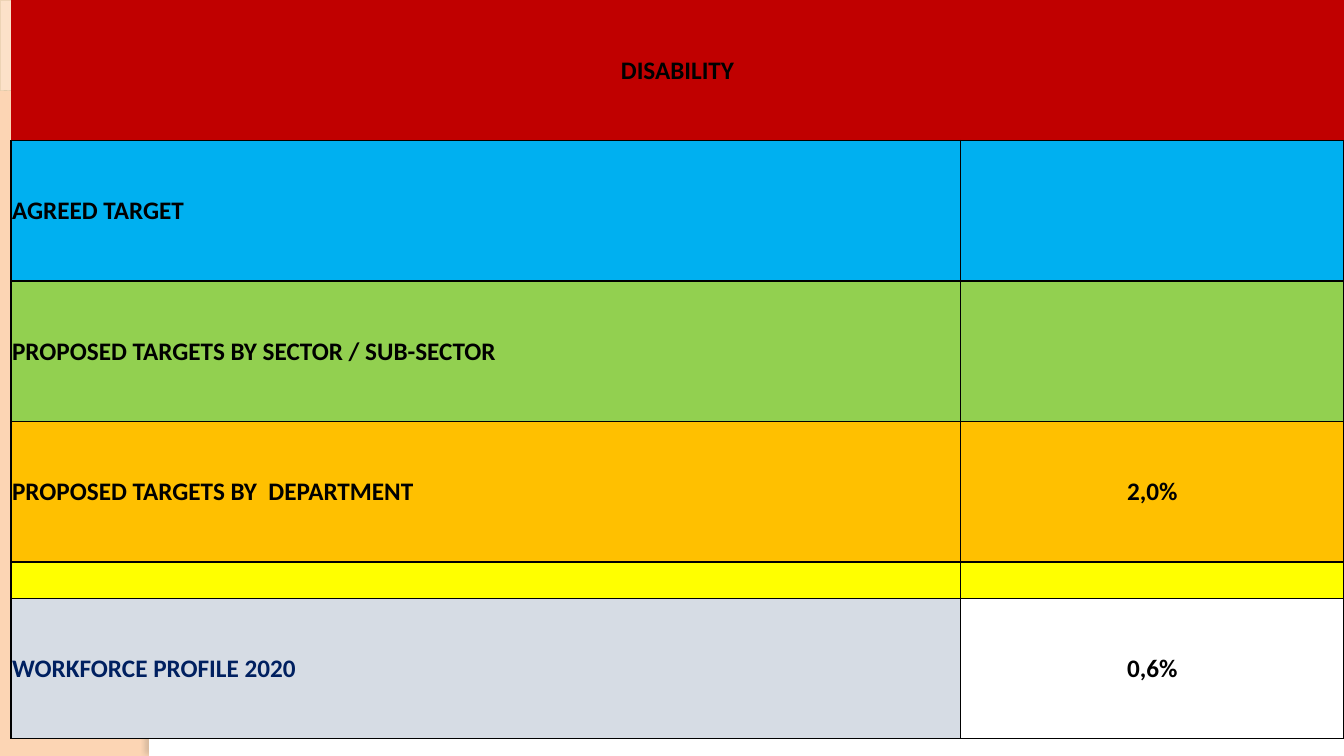
import pptx
import pptx.util
import pptx.dml.color
import pptx.enum.shapes
import pptx.enum.text
import pptx.oxml
import pptx.oxml.ns
from dataclasses import dataclass

Inches = pptx.util.Inches
ALIGN = pptx.enum.text.PP_ALIGN
SHAPE = pptx.enum.shapes.MSO_SHAPE


@dataclass(frozen=True)
class Theme:
    font: str = "Calibri"
    size: int = 18
    border_width: int = 1
    ink: str = "000000"
    navy: str = "002060"
    backdrop: str = "FCD5B4"
    panel: str = "FFFFFF"
    corner: str = "FEFAF4"
    corner_line: str = "D3C39F"
    shadow: str = "736F63"
    header: str = "C00000"
    agreed: str = "00B0F0"
    sector: str = "92D050"
    department: str = "FFC000"
    divider: str = "FFFF00"
    profile: str = "D6DCE4"


THEME = Theme()
TABLE_LEFT = 0.11
TABLE_HEIGHT = 7.33
COLUMN_WIDTHS = (9.42, 3.8)
DIVIDER_HEIGHT = 0.36
ROWS = (
    ("DISABILITY", "", THEME.header, THEME.header, THEME.ink),
    ("AGREED TARGET", "", THEME.agreed, THEME.agreed, THEME.ink),
    ("PROPOSED TARGETS BY SECTOR / SUB-SECTOR", "", THEME.sector, THEME.sector, THEME.ink),
    ("PROPOSED TARGETS BY  DEPARTMENT", "2,0%", THEME.department, THEME.department, THEME.ink),
    ("", "", THEME.divider, THEME.divider, THEME.ink),
    ("WORKFORCE PROFILE 2020", "0,6%", THEME.profile, THEME.panel, THEME.navy),
)
ROW_HEIGHT = (TABLE_HEIGHT - DIVIDER_HEIGHT) / (len(ROWS) - 1)


def rgb(value):
    return pptx.dml.color.RGBColor.from_string(value)


def apply(target, values):
    for name, value in values.items():
        setattr(target, name, value)


def paint(fill, color):
    fill.solid()
    fill.fore_color.rgb = rgb(color)


def element(markup):
    namespace = pptx.oxml.ns.nsdecls("a")
    return pptx.oxml.parse_xml(markup.replace(">", f" {namespace}>", 1))


def add_shape(page, kind, left, top, width, height, color):
    box = page.shapes.add_shape(
        kind, Inches(left), Inches(top), Inches(width), Inches(height))
    box.shadow.inherit = False
    paint(box.fill, color)
    box.line.fill.background()
    return box


def add_corner(page):
    corner = add_shape(page, SHAPE.PIE, -1.19, -0.89, 2.39, 1.79, THEME.corner)
    corner.adjustments[0] = 0
    corner.adjustments[1] = 54.02
    color = corner.fill._xPr.find(".//" + pptx.oxml.ns.qn("a:srgbClr"))
    color.append(element('<a:alpha val="33000"></a:alpha>'))
    corner.line.width = pptx.util.Pt(0.25)
    paint(corner.line.fill, THEME.corner_line)


def add_panel(page):
    panel = add_shape(page, SHAPE.RECTANGLE, 1.48, 0, 11.85, 7.5, THEME.panel)
    effects = panel._element.spPr.find(pptx.oxml.ns.qn("a:effectLst"))
    effects.append(element(
        f'<a:outerShdw blurRad="{Inches(0.04)}" dist="{Inches(0.04)}" dir="10800000">'
        f'<a:srgbClr val="{THEME.shadow}"><a:alpha val="25000"/></a:srgbClr></a:outerShdw>'))


def set_borders(cell, visible):
    properties = cell._tc.get_or_add_tcPr()
    width = pptx.util.Pt(THEME.border_width)
    for side in "LRTB":
        stroke = "<a:noFill/>"
        if side in visible:
            stroke = f'<a:solidFill><a:srgbClr val="{THEME.ink}"/></a:solidFill>'
        properties.append(element(f'<a:ln{side} w="{width}">{stroke}</a:ln{side}>'))


def format_cell(cell, text, fill, color, align, borders):
    set_borders(cell, borders)
    paint(cell.fill, fill)
    apply(cell, {
        "margin_left": Inches(0.01),
        "margin_right": Inches(0.01),
        "margin_top": Inches(0.01),
        "margin_bottom": 0,
        "vertical_anchor": pptx.enum.text.MSO_ANCHOR.MIDDLE,
    })
    if text:
        para = cell.text_frame.paragraphs[0]
        para.alignment = align
        span = para.add_run()
        span.text = text
        apply(span.font, {"name": THEME.font, "size": pptx.util.Pt(THEME.size), "bold": True})
        span.font.color.rgb = rgb(color)


def add_targets(page):
    heights = [ROW_HEIGHT if row[0] else DIVIDER_HEIGHT for row in ROWS]
    table = page.shapes.add_table(
        len(ROWS), len(COLUMN_WIDTHS), Inches(TABLE_LEFT), 0,
        Inches(sum(COLUMN_WIDTHS)), Inches(TABLE_HEIGHT)).table
    apply(table, {"first_row": False, "horz_banding": False})
    for column, width in zip(table.columns, COLUMN_WIDTHS):
        column.width = Inches(width)
    for index, (label, value, label_fill, value_fill, color) in enumerate(ROWS):
        table.rows[index].height = Inches(heights[index])
        borders = "LRTB" if index else "B"
        label_align = ALIGN.LEFT if index else ALIGN.CENTER
        format_cell(table.cell(index, 0), label, label_fill, color, label_align, borders)
        format_cell(table.cell(index, 1), value, value_fill, THEME.ink, ALIGN.CENTER, borders)
    table.cell(0, 0).merge(table.cell(0, 1))


def main():
    deck = pptx.Presentation()
    apply(deck, {"slide_width": Inches(13.33), "slide_height": Inches(7.5)})
    page = deck.slides.add_slide(deck.slide_layouts[6])
    paint(page.background.fill, THEME.backdrop)
    add_corner(page)
    add_panel(page)
    add_targets(page)
    deck.save("out.pptx")


if __name__ == "__main__":
    main()
